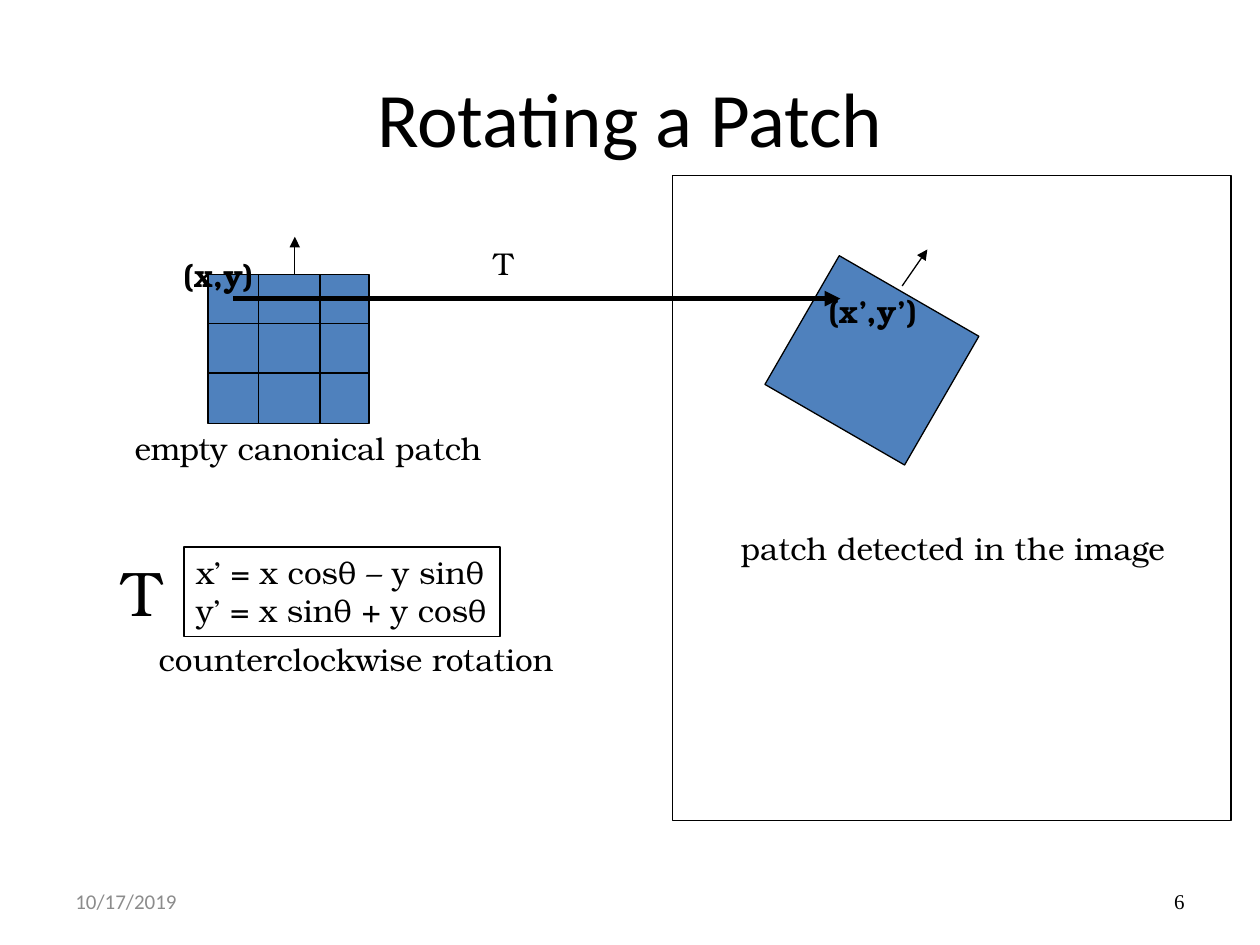
from pptx import Presentation
from pptx import util as u
from pptx.dml.color import RGBColor
from pptx.enum import shapes, text
from pptx.oxml.ns import qn
from lxml import etree

PX = 9144  # 100 px to the inch
THEME = {
    "ink": RGBColor(0x00, 0x00, 0x00),
    "muted": RGBColor(0x8C, 0x8C, 0x8C),
    "patch": RGBColor(0x4F, 0x81, 0xBD),
    "heading": "Calibri",
    "body": "TeX Gyre Bonum",
    "number": "Times New Roman",
    "title_size": 44,
    "symbol_size": 36,
    "body_size": 18,
    "footer_size": 12,
    "thin": 0.75,
    "thick": 3,
}
LEFT, CENTER, RIGHT = text.PP_ALIGN.LEFT, text.PP_ALIGN.CENTER, text.PP_ALIGN.RIGHT
TOP, MIDDLE = text.MSO_ANCHOR.TOP, text.MSO_ANCHOR.MIDDLE

deck = Presentation()
deck.slide_width, deck.slide_height = 1000 * PX, 750 * PX
slide = deck.slides.add_slide(deck.slide_layouts[6])


def write(words, box, font=THEME["body"], size=THEME["body_size"], color=THEME["ink"],
          bold=False, align=LEFT, anchor=TOP, wrap=False, framed=False):
    label = slide.shapes.add_textbox(*(v * PX for v in box))
    if framed:
        label.line.color.rgb = THEME["ink"]
        label.line.width = u.Pt(THEME["thin"])
    frame = label.text_frame
    frame.word_wrap = wrap
    frame.vertical_anchor = anchor
    if not wrap:
        frame.auto_size = text.MSO_AUTO_SIZE.SHAPE_TO_FIT_TEXT
    frame.text = words
    for paragraph in frame.paragraphs:
        paragraph.alignment = align
        for run in paragraph.runs:
            run.font.name, run.font.size, run.font.bold = font, u.Pt(size), bold
            run.font.color.rgb = color


def draw_line(start, end, width=THEME["thin"], arrow=False):
    line = slide.shapes.add_connector(
        shapes.MSO_CONNECTOR.STRAIGHT, *(v * PX for v in start + end))
    line.line.color.rgb = THEME["ink"]
    line.line.width = u.Pt(width)
    if arrow:
        etree.SubElement(line.line._get_or_add_ln(), qn("a:tailEnd"), type="triangle")
    etree.SubElement(line._element.spPr, qn("a:effectLst"))


# Footer and title
write("10/17/2019", (50, 695, 233, 40), font=THEME["heading"],
      size=THEME["footer_size"], color=THEME["muted"], anchor=MIDDLE, wrap=True)
write("6", (717, 695, 233, 40), font=THEME["number"],
      size=THEME["footer_size"], align=RIGHT, anchor=MIDDLE, wrap=True)
write("Rotating a Patch", (50, 30, 900, 125), font=THEME["heading"],
      size=THEME["title_size"], align=CENTER, anchor=MIDDLE, wrap=True)

# Canonical patch, detected patch and image frame
patch_left, patch_top, patch_width, patch_height = 165, 218, 128, 118
patch_right, patch_bottom = patch_left + patch_width, patch_top + patch_height
for box, angle, filled in (
    ((patch_left, patch_top, patch_width, patch_height), 0, True),
    ((628, 227, patch_width, patch_height), 30, True),
    ((534, 139, 443, 512), 0, False),
):
    area = slide.shapes.add_shape(
        shapes.MSO_SHAPE.RECTANGLE, *(v * PX for v in box))
    area.shadow.inherit = False
    area.rotation = angle
    area.line.color.rgb = THEME["ink"]
    area.line.width = u.Pt(THEME["thin"])
    if filled:
        area.fill.solid()
        area.fill.fore_color.rgb = THEME["patch"]
    else:
        area.fill.background()

# Orientation arrows
for start, end in (
    ((224, 218), (224, 218)),
    ((234, 218), (234, 188)),
    ((716, 227), (736, 198)),
):
    draw_line(start, end, arrow=True)

# Grid inside the canonical patch
for x in (205, 254):
    draw_line((x, patch_top), (x, patch_bottom))
for y in (257, 296):
    draw_line((patch_left, y), (patch_right, y))

# Mapping from the canonical patch to the detected one
draw_line((185, 237), (667, 237), width=THEME["thick"], arrow=True)
write("T", (382, 189, 36, 40))
write("(x,y)", (136, 198, 75, 40), bold=True)
write("(x’,y’)", (648, 227, 91, 40), bold=True)

# Captions
write("empty canonical patch", (96, 336, 297, 40), align=CENTER)
write("patch detected in the image", (578, 415, 358, 40))

# Rotation formula
write("T", (87, 434, 51, 70), size=THEME["symbol_size"])
write("x’ = x cosθ – y sinθ\ny’ = x sinθ + y cosθ", (146, 434, 251, 71), framed=True)
write("counterclockwise rotation", (116, 503, 335, 40))

deck.save("out.pptx")
